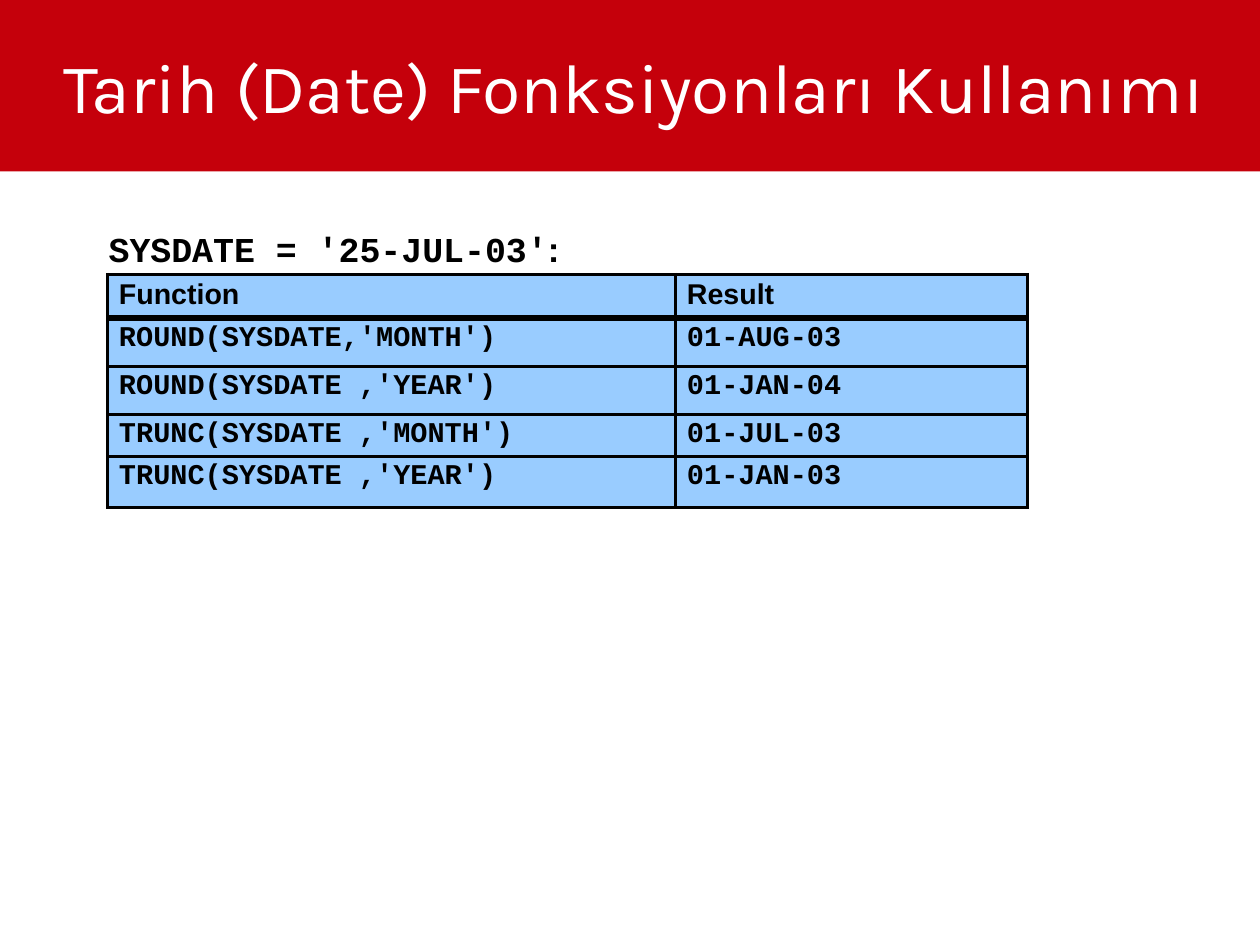
import pptx
import pptx.dml.color
import pptx.enum.shapes
import pptx.enum.text
import pptx.oxml
import pptx.oxml.ns
import pptx.util
from dataclasses import dataclass

Pt = pptx.util.Pt


@dataclass(frozen=True)
class Theme:
    banner: str = "C5000B"
    cell: str = "99CCFF"
    ink: str = "000000"
    light: str = "FFFFFF"
    title_font: str = "Karla"
    body_font: str = "Arial"
    code_font: str = "Courier New"
    title_size: float = 44
    caption_size: float = 22
    table_size: float = 18
    rule: float = 2.25
    header_rule: float = 4.5


THEME = Theme()
SLIDE_WIDTH, SLIDE_HEIGHT = 793.75, 595.25
TABLE_LEFT, TABLE_TOP = 67.75, 172.8
COLUMN_WIDTHS = (357.84, 221.76)
CELL_MARGIN = 3
ROWS = (
    (23.76, 1, ("Function", "Result")),
    (30.24, 0.9, ("ROUND(SYSDATE,'MONTH')", "01-AUG-03")),
    (30.24, 0.9, ("ROUND(SYSDATE ,'YEAR')", "01-JAN-04")),
    (24.48, 0.95, ("TRUNC(SYSDATE ,'MONTH')", "01-JUL-03")),
    (32.4, 0.9, ("TRUNC(SYSDATE ,'YEAR')", "01-JAN-03")),
)


def rgb(value):
    return pptx.dml.color.RGBColor.from_string(value)


def write(paragraph, text, *, font, size, color=THEME.ink, bold=True, spacing=None):
    run = paragraph.add_run()
    run.text = text
    run.font.name = font
    run.font.size = Pt(size)
    run.font.bold = bold
    run.font.color.rgb = rgb(color)
    if spacing is not None:
        paragraph.line_spacing = spacing


def add_banner(slide, height):
    banner = slide.shapes.add_shape(
        pptx.enum.shapes.MSO_SHAPE.RECTANGLE, 0, 0, Pt(SLIDE_WIDTH), Pt(height))
    banner.shadow.inherit = False
    banner.fill.solid()
    banner.fill.fore_color.rgb = rgb(THEME.banner)
    banner.line.fill.background()


def add_text_area(slide, left, top, width, height, inset=0):
    frame = slide.shapes.add_textbox(Pt(left), Pt(top), Pt(width), Pt(height)).text_frame
    frame.word_wrap = True
    frame.margin_left = frame.margin_right = Pt(inset)
    frame.margin_top = frame.margin_bottom = Pt(inset)
    return frame


def set_borders(cell, **widths):
    properties = cell._tc.get_or_add_tcPr()
    for position, (side, width) in enumerate(widths.items()):
        border = pptx.oxml.parse_xml(
            f'<a:{side} {pptx.oxml.ns.nsdecls("a")} w="{Pt(width)}"><a:solidFill>'
            f'<a:srgbClr val="{THEME.ink}"/></a:solidFill></a:{side}>')
        properties.insert(position, border)


def add_function_table(slide):
    table = slide.shapes.add_table(
        len(ROWS), len(COLUMN_WIDTHS), Pt(TABLE_LEFT), Pt(TABLE_TOP),
        Pt(sum(COLUMN_WIDTHS)), Pt(sum(row[0] for row in ROWS))).table
    table.horz_banding = False
    for column, width in zip(table.columns, COLUMN_WIDTHS):
        column.width = Pt(width)
    for index, (height, spacing, texts) in enumerate(ROWS):
        table.rows[index].height = Pt(height)
        font = THEME.code_font if index else THEME.body_font
        for cell, text in zip(table.rows[index].cells, texts):
            cell.margin_top = cell.margin_bottom = Pt(CELL_MARGIN)
            cell.fill.solid()
            cell.fill.fore_color.rgb = rgb(THEME.cell)
            write(cell.text_frame.paragraphs[0], text,
                  font=font, size=THEME.table_size, spacing=spacing)
            set_borders(cell, lnL=THEME.rule, lnR=THEME.rule,
                        lnT=THEME.header_rule if index == 1 else THEME.rule,
                        lnB=THEME.header_rule if index == 0 else THEME.rule)


def main():
    deck = pptx.Presentation()
    deck.slide_width, deck.slide_height = Pt(SLIDE_WIDTH), Pt(SLIDE_HEIGHT)
    slide = deck.slides.add_slide(deck.slide_layouts[6])

    add_banner(slide, 108)
    title = add_text_area(slide, 39.7, 4.32, 754.05, 99.36)
    title.vertical_anchor = pptx.enum.text.MSO_ANCHOR.MIDDLE
    write(title.paragraphs[0], "Tarih (Date) Fonksiyonları Kullanımı",
          font=THEME.title_font, size=THEME.title_size, color=THEME.light, bold=False)

    add_function_table(slide)
    caption = add_text_area(slide, TABLE_LEFT, 145.44, 623.52, 26.64, inset=0.72)
    for text, font in (("SYSDATE = '25-JUL-03'", THEME.code_font), (":", THEME.body_font)):
        write(caption.paragraphs[0], text, font=font, size=THEME.caption_size, spacing=0.9)

    deck.save("out.pptx")


if __name__ == "__main__":
    main()
